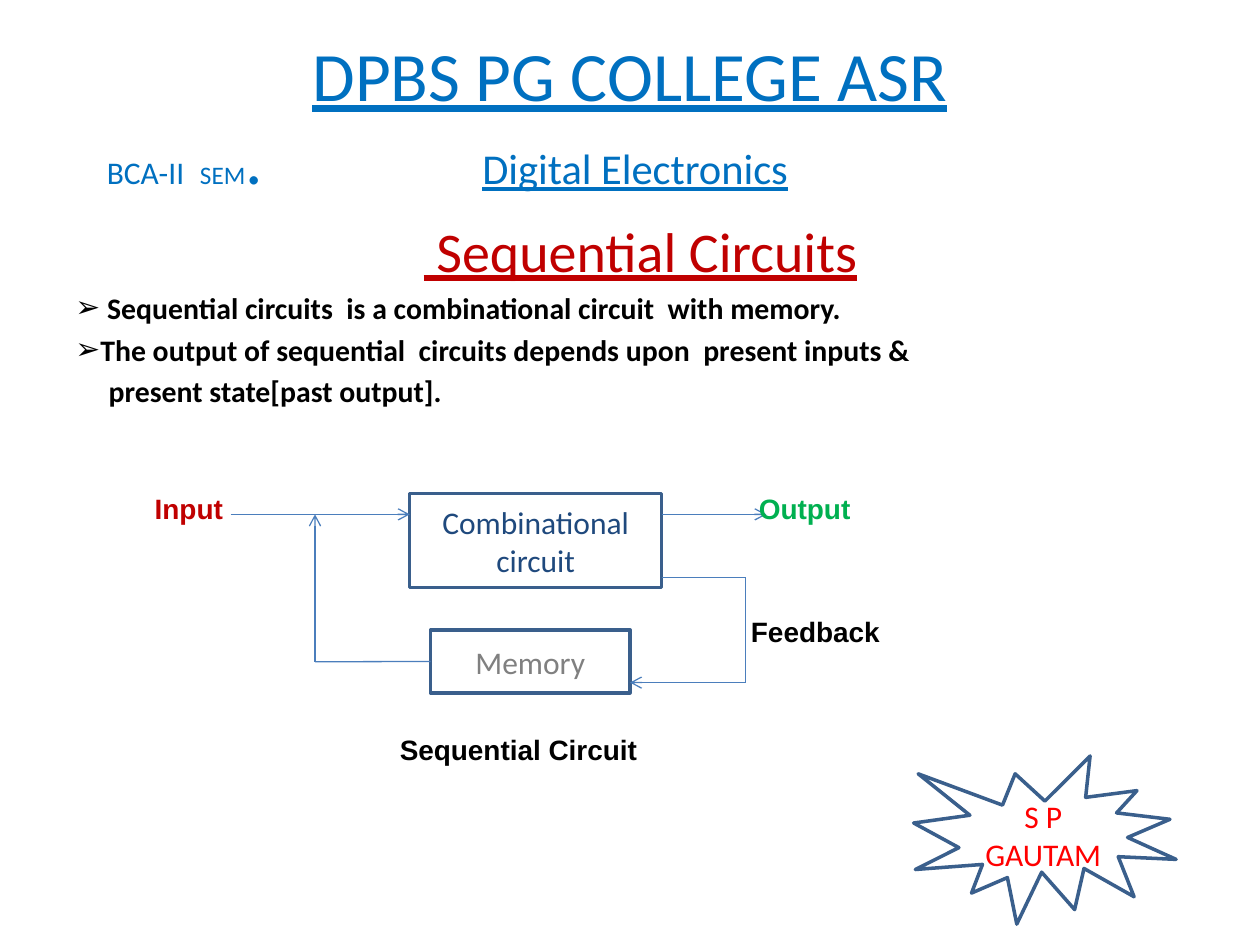
from dataclasses import dataclass
from typing import Optional

import pptx
import pptx.dml.color
import pptx.enum.shapes
import pptx.enum.text
import pptx.oxml
import pptx.oxml.ns
import pptx.util

Cm, Pt = pptx.util.Cm, pptx.util.Pt
PP_ALIGN, MSO_ANCHOR = pptx.enum.text.PP_ALIGN, pptx.enum.text.MSO_ANCHOR
MSO_SHAPE = pptx.enum.shapes.MSO_SHAPE
COLORS = {
    "blue": "0070C0", "darkred": "C00000", "black": "000000", "green": "00B050",
    "navy": "1F497D", "gray": "808080", "red": "FF0000", "white": "FFFFFF",
    "outline": "3A5F8C", "wire": "4B7EBC",
}


@dataclass
class Block:
    shape: int
    left: float
    top: float
    width: float
    height: float
    lines: list[str]
    color: str


@dataclass
class Label:
    text: str
    left: float
    middle: float
    color: str


@dataclass
class Wire:
    x1: float
    y1: float
    x2: float
    y2: float
    arrow: bool = False
    end: Optional[str] = None


@dataclass
class Point:
    text: str
    indent: float
    bullet: bool = True


BLOCKS = {
    "combinational": Block(MSO_SHAPE.RECTANGLE, 8.26, 9.95, 5.08, 1.9,
                           ["Combinational", "circuit"], "navy"),
    "memory": Block(MSO_SHAPE.RECTANGLE, 8.68, 12.7, 4.02, 1.27, ["Memory"], "gray"),
    "author": Block(MSO_SHAPE.EXPLOSION1, 18.42, 15.24, 5.29, 3.39, ["S P GAUTAM"], "red"),
}
LABELS = [
    Label("Input", 3.12, 10.24, "darkred"),
    Label("Output", 15.3, 10.24, "green"),
    Label("Feedback", 15.14, 12.72, "black"),
    Label("Sequential Circuit", 8.06, 15.1, "black"),
]
WIRES = [
    Wire(4.65, 10.37, 8.26, 10.37, True),
    Wire(13.34, 10.37, 15.45, 10.37, True),
    Wire(13.34, 11.64, 15.03, 11.64),
    Wire(15.03, 11.64, 15.03, 13.76),
    Wire(15.03, 13.76, 12.7, 13.76, True),
    Wire(6.35, 13.34, 8.68, 13.34, end="memory"),
    Wire(6.35, 13.34, 6.35, 10.37, True),
]
POINTS = [
    Point("Sequential circuits  is a combinational circuit  with memory.", 0.64),
    Point("The output of sequential  circuits depends upon  present inputs &", 0.48),
    Point("present state[past output].", 0.67, False),
]


def rgb(name: str):
    return pptx.dml.color.RGBColor.from_string(COLORS[name])


def set_font(font, size: float, color: str, name: str = "Calibri", **style) -> None:
    font.name, font.size = name, Pt(size)
    font.color.rgb = rgb(color)
    for key, value in style.items():
        setattr(font, key, value)


def add_xml(parent, tag: str, **attributes):
    el = pptx.oxml.parse_xml(f"<a:{tag} {pptx.oxml.ns.nsdecls('a')}/>")
    for key, value in attributes.items():
        el.set(key, value)
    parent.append(el)


def add_title(slide) -> None:
    sp = slide.shapes.title
    sp.left, sp.top, sp.width, sp.height = Cm(1.9), Cm(0.84), Cm(21.6), Cm(2.97)
    tf = sp.text_frame
    tf.word_wrap = True
    tf.auto_size = pptx.enum.text.MSO_AUTO_SIZE.NONE
    tf.vertical_anchor = MSO_ANCHOR.MIDDLE
    p = tf.paragraphs[0]
    p.text, p.alignment = "DPBS PG COLLEGE ASR", PP_ALIGN.CENTER
    set_font(p.font, 39.6, "blue", underline=True)
    p = tf.add_paragraph()
    p.alignment = PP_ALIGN.LEFT
    pPr = p._p.get_or_add_pPr()
    add_xml(pPr, "tabLst")
    add_xml(pPr[-1], "tab", pos=str(Cm(7.57)), algn="l")
    for text, size, underline in [
        ("BCA-II", 18, False), (" ", 39.6, False), ("SEM", 14.4, False),
        (".\t", 39.6, False), ("Digital Electronics", 24.3, True),
    ]:
        r = p.add_run()
        r.text = text
        set_font(r.font, size, "blue", underline=underline)


def add_points(slide) -> None:
    tf = slide.shapes.add_textbox(Cm(1.27), Cm(4.24), Cm(23.29), Cm(6)).text_frame
    tf.word_wrap = True
    p = tf.paragraphs[0]
    p.text, p.alignment = " Sequential Circuits", PP_ALIGN.CENTER
    set_font(p.font, 32, "darkred", underline=True)
    for point in POINTS:
        p = tf.add_paragraph()
        p.text, p.space_before = point.text, Pt(3.4)
        pPr = p._p.get_or_add_pPr()
        pPr.set("marL", str(Cm(point.indent)))
        if point.bullet:
            pPr.set("indent", str(-Cm(point.indent)))
            add_xml(pPr, "buFont", typeface="Arial")
            add_xml(pPr, "buChar", char="➢")
        set_font(p.font, 17, "black", bold=True)


def add_block(slide, block: Block):
    sp = slide.shapes.add_shape(block.shape, Cm(block.left), Cm(block.top),
                                Cm(block.width), Cm(block.height))
    sp.shadow.inherit = False
    sp.fill.solid()
    sp.fill.fore_color.rgb = rgb("white")
    sp.line.color.rgb, sp.line.width = rgb("outline"), Pt(2)
    tf = sp.text_frame
    tf.word_wrap, tf.vertical_anchor = True, MSO_ANCHOR.MIDDLE
    tf.text = "\n".join(block.lines)
    for p in tf.paragraphs:
        p.alignment = PP_ALIGN.CENTER
        set_font(p.font, 18, block.color)
    return sp


def add_label(slide, label: Label) -> None:
    height = 0.68
    tf = slide.shapes.add_textbox(Cm(label.left), Cm(label.middle - height / 2),
                                  Cm(5.2), Cm(height)).text_frame
    tf.word_wrap, tf.vertical_anchor = True, MSO_ANCHOR.MIDDLE
    tf.margin_left = tf.margin_right = tf.margin_top = tf.margin_bottom = 0
    p = tf.paragraphs[0]
    p.text = label.text
    set_font(p.font, 16, label.color, "Arial", bold=True)


def add_wire(slide, wire: Wire, blocks: dict) -> None:
    line = slide.shapes.add_connector(pptx.enum.shapes.MSO_CONNECTOR.STRAIGHT,
                                      Cm(wire.x1), Cm(wire.y1), Cm(wire.x2), Cm(wire.y2))
    line.line.color.rgb, line.line.width = rgb("wire"), Pt(0.75)
    if wire.arrow:
        add_xml(line.line._get_or_add_ln(), "tailEnd", type="arrow")
    add_xml(line._element.spPr, "effectLst")
    if wire.end:
        line.end_connect(blocks[wire.end], 1)


def main() -> None:
    prs = pptx.Presentation()
    prs.slide_width, prs.slide_height = Cm(25.4), Cm(19.05)
    slide = prs.slides.add_slide(prs.slide_layouts[5])
    add_title(slide)
    add_points(slide)
    blocks = {name: add_block(slide, block) for name, block in BLOCKS.items()}
    for wire in WIRES:
        add_wire(slide, wire, blocks)
    for label in LABELS:
        add_label(slide, label)
    prs.save("out.pptx")


if __name__ == "__main__":
    main()
